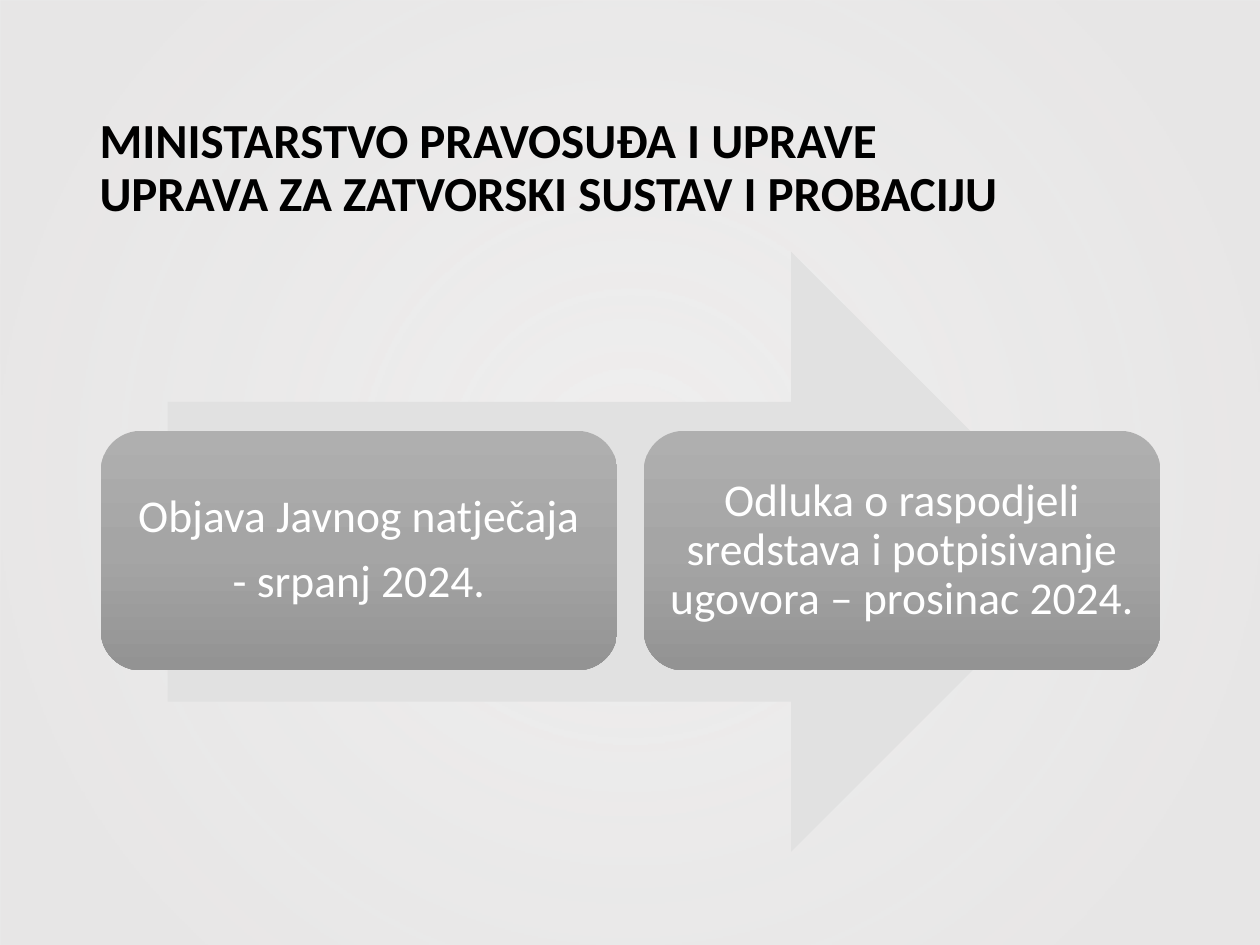
from lxml import etree
from pptx import Presentation
from pptx.dml.color import RGBColor
from pptx.enum.shapes import MSO_SHAPE
from pptx.enum.text import MSO_ANCHOR, MSO_AUTO_SIZE, PP_ALIGN
from pptx.oxml.ns import qn
from pptx.util import Inches, Pt

RECTANGLE = MSO_SHAPE.RECTANGLE
RIGHT_ARROW = MSO_SHAPE.RIGHT_ARROW
ROUNDED = MSO_SHAPE.ROUNDED_RECTANGLE
MIDDLE = MSO_ANCHOR.MIDDLE
NO_FIT = MSO_AUTO_SIZE.NONE
LEFT, CENTER = PP_ALIGN.LEFT, PP_ALIGN.CENTER

BLACK = RGBColor(0x00, 0x00, 0x00)
WHITE = RGBColor(0xFF, 0xFF, 0xFF)
MIST = RGBColor(0xE7, 0xE6, 0xE6)
ARROW_GRAY = RGBColor(0xE1, 0xE1, 0xE1)
STEP_TOP = RGBColor(0xAF, 0xAF, 0xAF)
STEP_MIDDLE = RGBColor(0xA5, 0xA5, 0xA5)
STEP_BOTTOM = RGBColor(0x93, 0x93, 0x93)

COLUMNS, ROWS = 100, 75
TITLE_ONLY = 5


class ProcessSlide:
    font = "Calibri"
    title_size, step_size = Pt(28), Pt(26)
    line_spacing = 0.9

    def __init__(self, deck):
        self.deck = deck
        self.slide = deck.slides.add_slide(deck.slide_layouts[TITLE_ONLY])

    def box(self, column, row, columns, rows):
        """Turn grid cells into slide lengths."""
        across = self.deck.slide_width / COLUMNS
        down = self.deck.slide_height / ROWS
        return [round(n) for n in
                (column * across, row * down, columns * across, rows * down)]

    def shape(self, preset, cells, color=None):
        shape = self.slide.shapes.add_shape(preset, *self.box(*cells))
        shape.shadow.inherit = False
        shape.line.fill.background()
        if color is not None:
            shape.fill.solid()
            shape.fill.fore_color.rgb = color
        return shape

    def gradient(self, shape, stops, circular=False):
        """Fill with (position %, color, opacity %) stops."""
        shape.fill.gradient()
        grad = shape._element.spPr.find(qn("a:gradFill"))
        for child in list(grad):
            grad.remove(child)
        stop_list = etree.SubElement(grad, qn("a:gsLst"))
        for position, color, opacity in stops:
            stop = etree.SubElement(stop_list, qn("a:gs"), pos=str(position * 1000))
            tint = etree.SubElement(stop, qn("a:srgbClr"), val=str(color))
            if opacity < 100:
                etree.SubElement(tint, qn("a:alpha"), val=str(opacity * 1000))
        if circular:
            route = etree.SubElement(grad, qn("a:path"), {"path": "circle"})
            etree.SubElement(route, qn("a:fillToRect"),
                             dict.fromkeys("ltrb", "50000"))
        else:
            etree.SubElement(grad, qn("a:lin"), ang="5400000", scaled="0")

    def set_text(self, frame, lines, size, color, align, bold=False, gap=0):
        frame.word_wrap = True
        frame.auto_size = NO_FIT
        frame.vertical_anchor = MIDDLE
        frame.text = "\n".join(lines)
        for paragraph in frame.paragraphs:
            paragraph.alignment = align
            paragraph.line_spacing = self.line_spacing
            paragraph.space_before = Pt(0)
            paragraph.space_after = Pt(gap)
            for run in paragraph.runs:
                run.font.name, run.font.size = self.font, size
                run.font.bold, run.font.color.rgb = bold, color

    def backdrop(self):
        wash = self.shape(RECTANGLE, (0, 0, COLUMNS, ROWS))
        self.gradient(wash, [(10, MIST, 68), (85, MIST, 97)], circular=True)
        # Send behind the title
        self.slide.shapes._spTree.insert(2, wash._element)

    def title(self, lines, cells):
        title = self.slide.shapes.title
        title.left, title.top, title.width, title.height = self.box(*cells)
        frame = title.text_frame
        # The heading sits half a line below the middle
        frame.margin_top = Inches(0.48)
        self.set_text(frame, lines, self.title_size, BLACK, LEFT, bold=True)

    def arrow(self, cells):
        self.shape(RIGHT_ARROW, cells, ARROW_GRAY)

    def step(self, lines, cells):
        step = self.shape(ROUNDED, cells)
        self.gradient(step, [(0, STEP_TOP, 100), (50, STEP_MIDDLE, 100),
                             (100, STEP_BOTTOM, 100)])
        frame = step.text_frame
        frame.margin_left = frame.margin_right = Inches(0.11)
        frame.margin_top = frame.margin_bottom = Inches(0.11)
        self.set_text(frame, lines, self.step_size, WHITE, CENTER, gap=9)


def main():
    deck = Presentation()
    deck.slide_width, deck.slide_height = Inches(10), Inches(7.5)
    page = ProcessSlide(deck)

    # Background and heading
    page.backdrop()
    page.title(["MINISTARSTVO PRAVOSUĐA I UPRAVE",
                "UPRAVA ZA ZATVORSKI SUSTAV I PROBACIJU"], (6.9, 4, 86.2, 14.5))

    # Arrow with the steps across it
    page.arrow((13.3, 20, 73.3, 47.6))
    steps = [["Objava Javnog natječaja", "- srpanj 2024."],
             ["Odluka o raspodjeli sredstava i potpisivanje ugovora – prosinac 2024."]]
    step_width, step_gap = 41, 2.1
    for index, lines in enumerate(steps):
        page.step(lines, (8 + index * (step_width + step_gap), 34.2, step_width, 19))

    deck.save("out.pptx")


if __name__ == "__main__":
    main()
